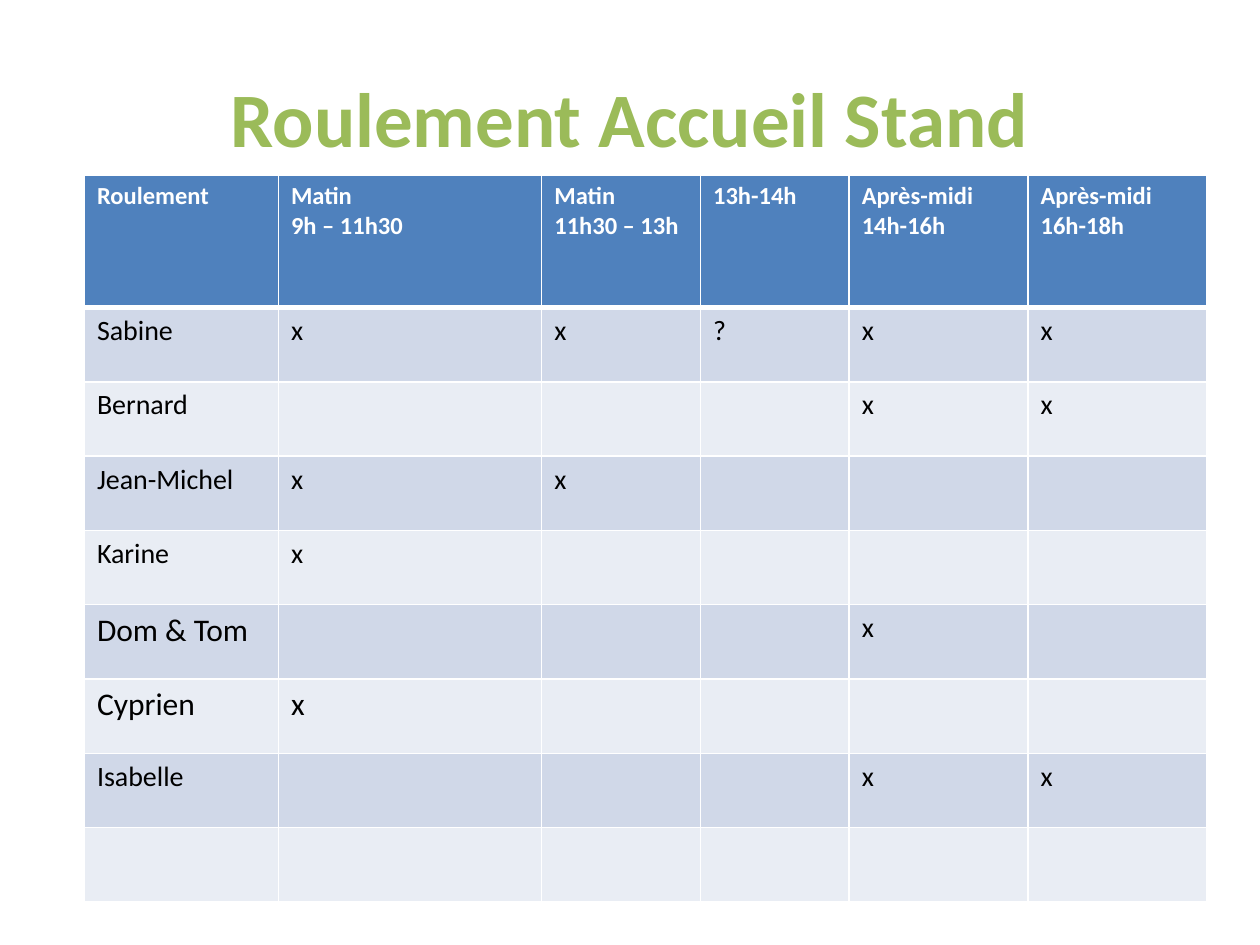
import pptx
import pptx.dml.color
import pptx.enum.text
import pptx.oxml
import pptx.oxml.ns
import pptx.util

RGBColor = pptx.dml.color.RGBColor
Inches = pptx.util.Inches
Pt = pptx.util.Pt

GREEN = RGBColor(0x9B, 0xBB, 0x59)
BLUE = RGBColor(0x4F, 0x81, 0xBD)
BAND_DARK = RGBColor(0xD0, 0xD8, 0xE8)
BAND_LIGHT = RGBColor(0xE9, 0xED, 0xF4)
WHITE = RGBColor(0xFF, 0xFF, 0xFF)
BLACK = RGBColor(0x00, 0x00, 0x00)

COLUMN_WIDTHS = [1.54, 2.09, 1.26, 1.18, 1.42, 1.42]
HEADER_HEIGHT, PERSON_HEIGHT = 1.05, 0.59
HEADINGS = ["Roulement", "Matin\n9h – 11h30", "Matin\n11h30 – 13h",
            "13h-14h", "Après-midi\n14h-16h", "Après-midi\n16h-18h"]
ROSTER = [
    ["Sabine", "x", "x", "?", "x", "x"],
    ["Bernard", "", "", "", "x", "x"],
    ["Jean-Michel", "x", "x", "", "", ""],
    ["Karine", "x", "", "", "", ""],
    ["Dom & Tom", "", "", "", "x", ""],
    ["Cyprien", "x", "", "", "", ""],
    ["Isabelle", "", "", "", "x", "x"],
    [""] * 6,
]
# Entries set larger than the rest, as (row, column)
LARGE_ENTRIES = {(5, 0), (6, 0), (6, 1)}


class RosterSlide:
    font_name = "Calibri"

    def __init__(self, presentation):
        self.slide = presentation.slides.add_slide(presentation.slide_layouts[6])

    def set_text(self, frame, text, size, color, bold=False, align=None):
        frame.text = text
        for paragraph in frame.paragraphs:
            paragraph.alignment = align
            for run in paragraph.runs:
                run.font.name = self.font_name
                run.font.size = Pt(size)
                run.font.bold = bold
                run.font.color.rgb = color

    def title(self, text, left, top, width, height):
        box = self.slide.shapes.add_textbox(
            Inches(left), Inches(top), Inches(width), Inches(height))
        box.text_frame.word_wrap = True
        box.text_frame.vertical_anchor = pptx.enum.text.MSO_ANCHOR.MIDDLE
        self.set_text(box.text_frame, text, 44, GREEN, True,
                      pptx.enum.text.PP_ALIGN.CENTER)

    def borders(self, cell, top, bottom):
        properties = cell._tc.get_or_add_tcPr()
        for side, points in (("L", 1), ("R", 1), ("T", top), ("B", bottom)):
            properties.append(pptx.oxml.parse_xml(
                f'<a:ln{side} {pptx.oxml.ns.nsdecls("a")} w="{Pt(points)}">'
                f'<a:solidFill><a:srgbClr val="{WHITE}"/></a:solidFill>'
                f'</a:ln{side}>'))

    def table(self, rows, left, top):
        heights = [HEADER_HEIGHT] + [PERSON_HEIGHT] * (len(rows) - 1)
        table = self.slide.shapes.add_table(
            len(rows), len(COLUMN_WIDTHS), Inches(left), Inches(top),
            Inches(sum(COLUMN_WIDTHS)), Inches(sum(heights))).table
        for column, width in zip(table.columns, COLUMN_WIDTHS):
            column.width = Inches(width)
        for row, height in zip(table.rows, heights):
            row.height = Inches(height)
        for r, entries in enumerate(rows):
            header = r == 0
            fill = BLUE if header else BAND_DARK if r % 2 else BAND_LIGHT
            for c, entry in enumerate(entries):
                cell = table.cell(r, c)
                self.borders(cell, 3 if r == 1 else 1, 3 if header else 1)
                cell.fill.solid()
                cell.fill.fore_color.rgb = fill
                size = 14 if header else 18 if (r, c) in LARGE_ENTRIES else 16
                self.set_text(cell.text_frame, entry, size,
                              WHITE if header else BLACK, header)


def main():
    presentation = pptx.Presentation()
    presentation.slide_width = Inches(10)
    presentation.slide_height = Inches(7.5)
    roster = RosterSlide(presentation)

    # Heading
    roster.title("Roulement Accueil Stand", 0.5, 0.3, 9, 1.25)

    # Who is on the stand, and when
    roster.table([HEADINGS] + ROSTER, 0.67, 1.39)

    presentation.save("out.pptx")


if __name__ == "__main__":
    main()
